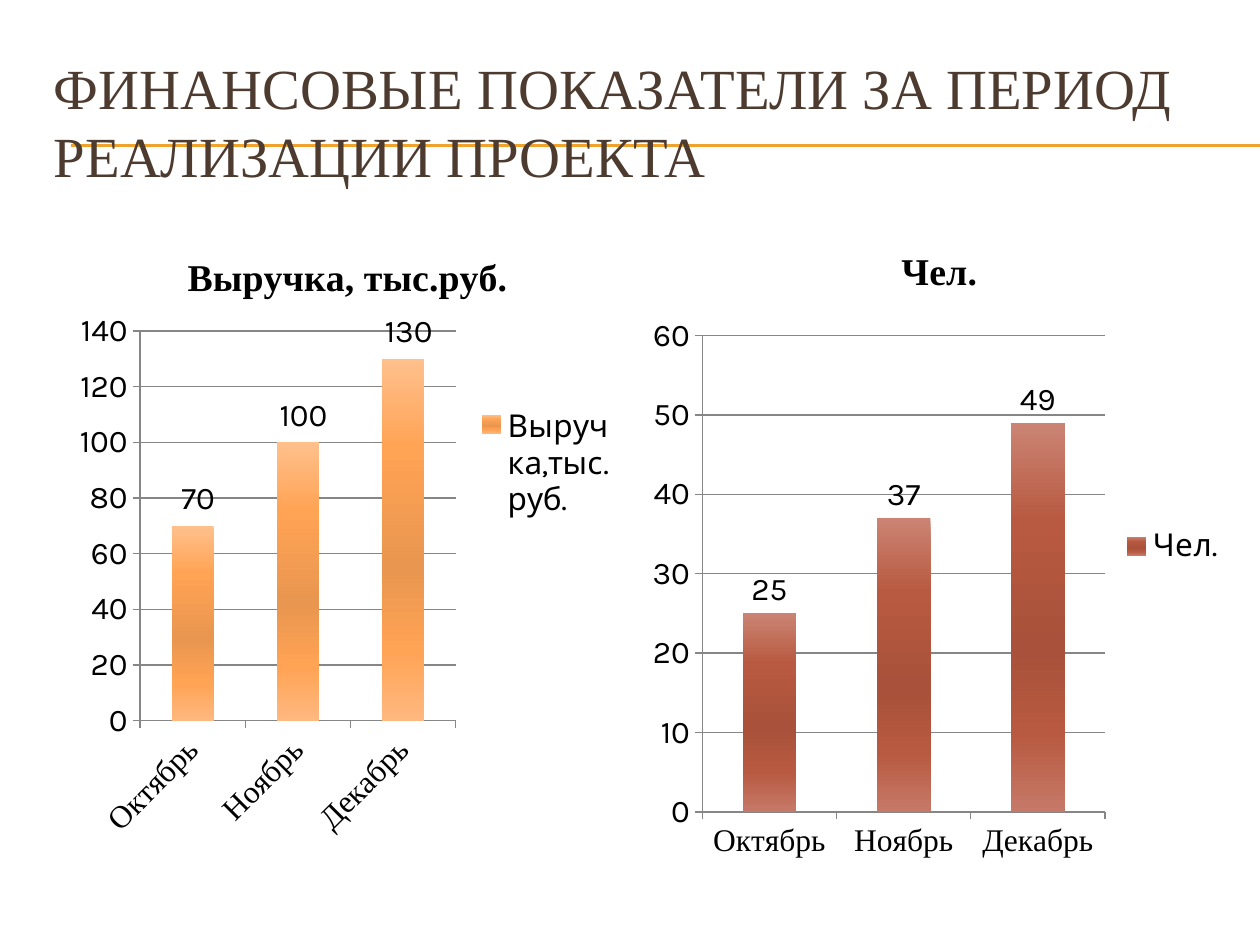
from lxml.etree import SubElement
from pptx import Presentation
from pptx.chart.data import CategoryChartData
from pptx.dml.color import RGBColor
from pptx.enum.chart import XL_CHART_TYPE, XL_LABEL_POSITION, XL_LEGEND_POSITION, XL_TICK_MARK
from pptx.enum.shapes import MSO_CONNECTOR
from pptx.enum.text import MSO_ANCHOR
from pptx.oxml import parse_xml
from pptx.oxml.ns import nsdecls, qn
from pptx.util import Inches, Pt

BROWN = RGBColor(0x4E, 0x3B, 0x30)
GOLD = RGBColor(0xF0, 0xA2, 0x2E)
BLACK = RGBColor(0, 0, 0)
GREY = RGBColor(0x86, 0x86, 0x86)
SERIF, SANS = "Times New Roman", "Karla"

# Content
TITLE = "ФИНАНСОВЫЕ ПОКАЗАТЕЛИ ЗА ПЕРИОД РЕАЛИЗАЦИИ ПРОЕКТА"
MONTHS = ["Октябрь", "Ноябрь", "Декабрь"]
STOPS = [0, 25, 58, 80, 100]  # percent of the bar's height
CHARTS = [
    dict(title="Выручка, тыс.руб.", name="Выручка,тыс.руб.", values=[70, 100, 130],
         kind=XL_CHART_TYPE.COLUMN_STACKED, box=(0.55, 1.8, 4.42, 4.95),
         plot=(0.127, 0.167, 0.567, 0.625), legend=(0.73, 0.28, 0.25, 0.2),
         top=140, step=20, turn=-45, label=XL_LABEL_POSITION.INSIDE_END, shift=(0.01, -0.08),
         shades=["FFC08C", "FFA354", "E99650", "FFA354", "FFB87F"]),
    dict(title="Чел.", name="Чел.", values=[25, 37, 49],
         kind=XL_CHART_TYPE.COLUMN_CLUSTERED, box=(5.08, 1.75, 4.75, 5.17),
         plot=(0.104, 0.177, 0.673, 0.731), legend=None,
         top=60, step=10, turn=0, label=XL_LABEL_POSITION.OUTSIDE_END, shift=None,
         shades=["CB8474", "B85A41", "A9513A", "B85A41", "C67968"]),
]


def style(font, **values):
    for key, value in values.items():
        setattr(font, key, value)
    font.color.rgb = BLACK


def layout_xml(**parts):
    inner = "".join(f'<c:{key} val="{value}"/>' for key, value in parts.items())
    return parse_xml(f'<c:layout {nsdecls("c")}><c:manualLayout>{inner}</c:manualLayout></c:layout>')


def place(element, frame, **extra):
    """Fix the position of a chart part as shares of the chart's size."""
    for old in element.findall(qn("c:layout")):
        element.remove(old)
    layout = layout_xml(**extra, xMode="edge", yMode="edge", **dict(zip("xywh", frame)))
    if element.tag == qn("c:plotArea"):
        element.insert(0, layout)
    else:
        element.find(qn("c:legendPos")).addnext(layout)


def paint_bars(series, shades):
    fill = series.format.fill
    fill.gradient()
    fill.gradient_angle = 270
    stops = series.format.fill._xPr.find(qn("a:gradFill")).find(qn("a:gsLst"))
    for old in list(stops):
        stops.remove(old)
    for percent, shade in zip(STOPS, shades):
        stop = SubElement(stops, qn("a:gs"), pos=str(percent * 1000))
        SubElement(stop, qn("a:srgbClr"), val=shade)


def add_column_chart(slide, item):
    data = CategoryChartData()
    data.categories = MONTHS
    data.add_series(item["name"], item["values"])
    frame = slide.shapes.add_chart(item["kind"], *map(Inches, item["box"]), data)
    chart = frame.chart
    style(chart.font, size=Pt(18), name=SANS)

    # Title and legend
    chart.has_title = True
    title = chart.chart_title.text_frame
    title.text = item["title"]
    style(title.paragraphs[0].runs[0].font, size=Pt(21.6), bold=True, name=SERIF)
    chart.has_legend = True
    chart.legend.position = XL_LEGEND_POSITION.RIGHT
    chart.legend.include_in_layout = False
    if item["legend"]:
        place(chart.legend._element, item["legend"])

    # Axes
    months, scale = chart.category_axis, chart.value_axis
    style(months.tick_labels.font, size=Pt(18), name=SERIF)
    if item["turn"]:
        body = months._element.find(qn("c:txPr")).find(qn("a:bodyPr"))
        body.set("rot", str(item["turn"] * 60000))
    scale.minimum_scale, scale.maximum_scale, scale.major_unit = 0, item["top"], item["step"]
    scale.has_major_gridlines = True
    for line in (months.format.line, scale.format.line, scale.major_gridlines.format.line):
        line.color.rgb = GREY
        line.width = Pt(0.75)
    for axis in (months, scale):
        axis.major_tick_mark = XL_TICK_MARK.OUTSIDE

    # Bars and their values
    plot = chart.plots[0]
    plot.gap_width = 150
    plot.vary_by_categories = False
    place(chart._chartSpace.chart.plotArea, item["plot"], layoutTarget="inner")
    series = plot.series[0]
    paint_bars(series, item["shades"])
    labels = series.data_labels
    labels.show_value = True
    labels.position = item["label"]
    style(labels.font, size=Pt(18), name=SANS)
    if item["shift"]:
        for index in range(len(MONTHS)):
            series.points[index].data_label.position = item["label"]
        for label in labels._element.findall(qn("c:dLbl")):
            label.find(qn("c:idx")).addnext(layout_xml(**dict(zip("xy", item["shift"]))))


def main():
    deck = Presentation()
    deck.slide_width, deck.slide_height = Inches(10), Inches(7.5)
    slide = deck.slides.add_slide(deck.slide_layouts[6])

    # Double rule behind the title
    for height in (1.15, 1.16):
        rule = slide.shapes.add_connector(MSO_CONNECTOR.STRAIGHT, Inches(0.56), Inches(height),
                                          Inches(10), Inches(height))
        rule.line.color.rgb = GOLD
        rule.line.width = Pt(0.75)
        SubElement(rule._element.spPr, qn("a:effectLst"))

    # Title
    box = slide.shapes.add_textbox(*map(Inches, (0.33, 0.5, 9.5, 0.92)))
    box.text_frame.word_wrap = True
    box.text_frame.vertical_anchor = MSO_ANCHOR.MIDDLE
    span = box.text_frame.paragraphs[0].add_run()
    span.text = TITLE
    style(span.font, size=Pt(32.4), name=SERIF)
    span.font.color.rgb = BROWN

    for item in CHARTS:
        add_column_chart(slide, item)
    deck.save("out.pptx")


if __name__ == "__main__":
    main()
